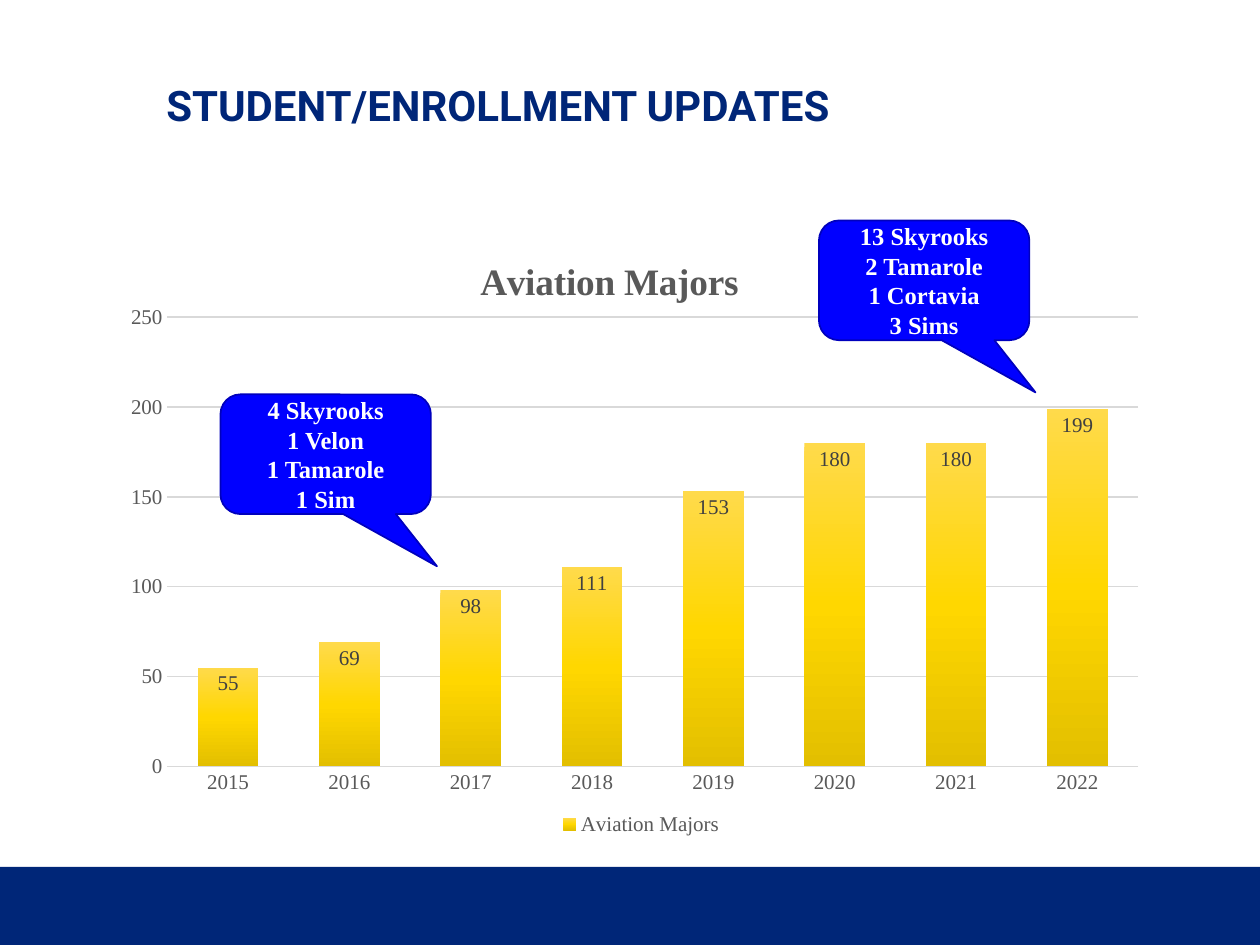
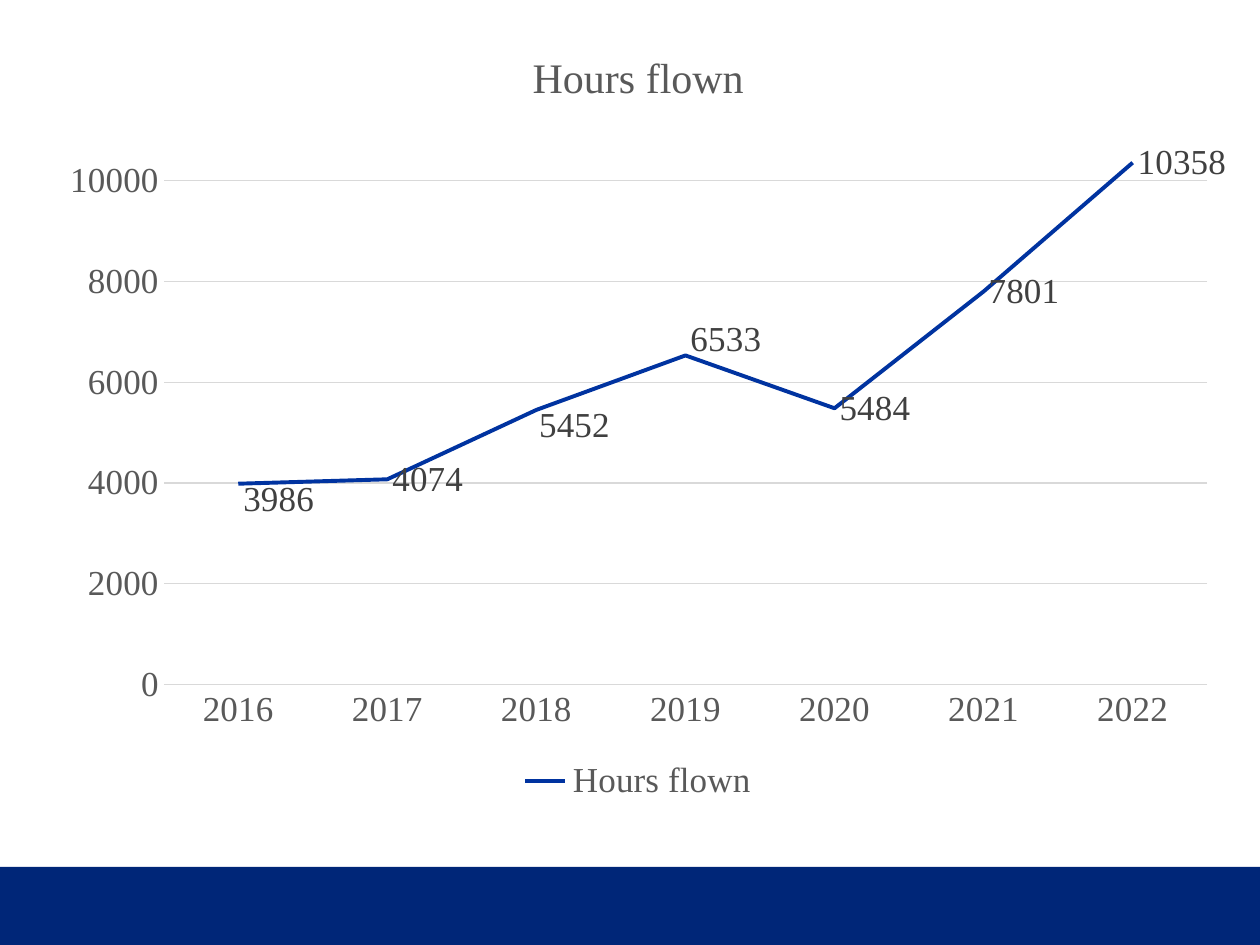
from dataclasses import dataclass
from typing import Optional

from pptx import Presentation
from pptx import util as u
from pptx.chart import data as chart_data
from pptx.dml import color as dml
from pptx.enum import chart as chart_enum, shapes, text
from pptx.oxml import parse_xml
from pptx.oxml.ns import nsdecls


@dataclass(frozen=True)
class Theme:
    navy: str = "002678"
    line_blue: str = "0033A0"
    callout: str = "0000FF"
    callout_edge: str = "0000BD"
    white: str = "FFFFFF"
    chart_text: str = "595959"
    label_text: str = "404040"
    grid: str = "D9D9D9"
    bar_stops: tuple = ((0, "FFDA4B"), (50, "FFD700"), (100, "E3BF00"))
    heading_font: str = "Roboto"
    body_font: str = "Times New Roman"
    heading_size: float = 24
    callout_size: float = 14


@dataclass(frozen=True)
class Box:
    left: float
    top: float
    width: float
    height: float

    def lengths(self) -> tuple:
        return tuple(u.Inches(v) for v in (self.left, self.top, self.width, self.height))


@dataclass(frozen=True)
class Callout:
    left: float
    top: float
    lines: tuple


@dataclass(frozen=True)
class ChartPlan:
    kind: chart_enum.XL_CHART_TYPE
    box: Box
    plot: Box
    name: str
    first_year: int
    values: tuple
    maximum: float
    step: float
    text_size: float
    title_size: float
    title_bold: bool
    axis_width: float
    label_position: chart_enum.XL_LABEL_POSITION
    title_at: Optional[tuple] = None


THEME = Theme()
BAND = Box(0, 6.88, 10, 0.62)
HEADING = Box(1.25, 0.5, 7.5, 0.58)
CALLOUT_WIDTH, CALLOUT_HEIGHT = 1.67, 0.95
CALLOUT_ADJUSTMENTS = (0.529, 0.936, 0.167)
FLEET_CALLOUTS = (
    Callout(1.75, 3.13, ("4 Skyrooks", "1 Velon", "1 Tamarole", "1 Sim")),
    Callout(6.5, 1.75, ("13 Skyrooks", "2 Tamarole", "1 Cortavia", "3 Sims")),
)
MAJORS = ChartPlan(
    kind=chart_enum.XL_CHART_TYPE.COLUMN_CLUSTERED,
    box=Box(0.93, 1.75, 8.32, 4.92),
    plot=Box(0.048, 0.156, 0.926, 0.725),
    name="Aviation Majors",
    first_year=2015,
    values=(55, 69, 98, 111, 153, 180, 180, 199),
    maximum=250,
    step=50,
    text_size=12,
    title_size=21.3,
    title_bold=True,
    axis_width=1,
    label_position=chart_enum.XL_LABEL_POSITION.INSIDE_END,
    title_at=(0.34, 0.05),
)
HOURS = ChartPlan(
    kind=chart_enum.XL_CHART_TYPE.LINE,
    box=Box(0.37, 0.16, 9.39, 6.25),
    plot=Box(0.099, 0.14, 0.882, 0.704),
    name="Hours flown",
    first_year=2016,
    values=(3986, 4074, 5452, 6533, 5484, 7801, 10358),
    maximum=11000,
    step=2000,
    text_size=20,
    title_size=24,
    title_bold=False,
    axis_width=0.75,
    label_position=chart_enum.XL_LABEL_POSITION.RIGHT,
)
HOURS_LABEL_SHIFTS = {0: (0, 0.02), 2: (-0.002, 0.02), 3: (0, -0.02)}


def rgb(value: str) -> dml.RGBColor:
    return dml.RGBColor.from_string(value)


def style_font(font, size: float, color: str, bold: bool = False,
               name: str = THEME.body_font) -> None:
    font.name = name
    font.size = u.Pt(size)
    font.bold = bold
    font.color.rgb = rgb(color)


def style_line(line, color: str, width: float) -> None:
    line.color.rgb = rgb(color)
    line.width = u.Pt(width)


def add_filled_shape(slide, preset, box: Box, color: str):
    shape = slide.shapes.add_shape(preset, *box.lengths())
    shape.shadow.inherit = False
    shape.fill.solid()
    shape.fill.fore_color.rgb = rgb(color)
    shape.line.fill.background()
    return shape


def add_banded_slide(presentation):
    slide = presentation.slides.add_slide(presentation.slide_layouts[6])
    add_filled_shape(slide, shapes.MSO_SHAPE.RECTANGLE, BAND, THEME.navy)
    return slide


def add_heading(slide, wording: str) -> None:
    frame = slide.shapes.add_textbox(*HEADING.lengths()).text_frame
    frame.word_wrap = True
    frame.vertical_anchor = text.MSO_ANCHOR.BOTTOM
    frame.margin_left = frame.margin_right = u.Inches(0.07)
    frame.margin_top = frame.margin_bottom = u.Inches(0.04)
    paragraph = frame.paragraphs[0]
    paragraph.line_spacing = 0.9
    run = paragraph.add_run()
    run.text = wording
    style_font(run.font, THEME.heading_size, THEME.navy, True, THEME.heading_font)


def add_callout(slide, callout: Callout) -> None:
    box = Box(callout.left, callout.top, CALLOUT_WIDTH, CALLOUT_HEIGHT)
    shape = add_filled_shape(
        slide, shapes.MSO_SHAPE.ROUNDED_RECTANGULAR_CALLOUT, box, THEME.callout)
    style_line(shape.line, THEME.callout_edge, 1)
    for index, adjustment in enumerate(CALLOUT_ADJUSTMENTS):
        shape.adjustments[index] = adjustment
    frame = shape.text_frame
    frame.word_wrap = True
    frame.vertical_anchor = text.MSO_ANCHOR.MIDDLE
    for index, wording in enumerate(callout.lines):
        paragraph = frame.add_paragraph() if index else frame.paragraphs[0]
        paragraph.alignment = text.PP_ALIGN.CENTER
        run = paragraph.add_run()
        run.text = wording
        style_font(run.font, THEME.callout_size, THEME.white, True)


def set_layout(parent, index: int, settings: dict) -> None:
    for old_layout in parent.xpath("./c:layout"):
        parent.remove(old_layout)
    entries = "".join(f'<c:{key} val="{value}"/>' for key, value in settings.items())
    parent.insert(index, parse_xml(
        f'<c:layout {nsdecls("c")}><c:manualLayout>{entries}</c:manualLayout></c:layout>'))


def add_chart_title(chart, plan: ChartPlan) -> None:
    chart.has_title = True
    title = chart.chart_title
    run = title.text_frame.paragraphs[0].add_run()
    run.text = plan.name
    style_font(run.font, plan.title_size, THEME.chart_text, plan.title_bold)
    title.include_in_layout = False
    if plan.title_at:
        left, top = plan.title_at
        set_layout(title._element, 1,
                   {"xMode": "edge", "yMode": "edge", "x": left, "y": top})


def style_axes(chart, plan: ChartPlan) -> None:
    category_axis, value_axis = chart.category_axis, chart.value_axis
    for axis in (category_axis, value_axis):
        axis.major_tick_mark = axis.minor_tick_mark = chart_enum.XL_TICK_MARK.NONE
        style_font(axis.tick_labels.font, plan.text_size, THEME.chart_text)
    style_line(category_axis.format.line, THEME.grid, plan.axis_width)
    value_axis.format.line.fill.background()
    value_axis.minimum_scale = 0
    value_axis.maximum_scale = plan.maximum
    value_axis.major_unit = plan.step
    value_axis.has_major_gridlines = True
    style_line(value_axis.major_gridlines.format.line, THEME.grid, 0.75)


def add_series_chart(slide, plan: ChartPlan):
    data = chart_data.CategoryChartData()
    data.categories = [str(plan.first_year + i) for i in range(len(plan.values))]
    data.add_series(plan.name, plan.values)
    chart = slide.shapes.add_chart(plan.kind, *plan.box.lengths(), data).chart
    style_font(chart.font, plan.text_size, THEME.chart_text)
    add_chart_title(chart, plan)
    style_axes(chart, plan)
    chart.has_legend = True
    chart.legend.position = chart_enum.XL_LEGEND_POSITION.BOTTOM
    chart.legend.include_in_layout = False
    style_font(chart.legend.font, plan.text_size, THEME.chart_text)
    plot = chart.plots[0]
    plot.vary_by_categories = False
    labels = plot.series[0].data_labels
    labels.show_value = True
    labels.position = plan.label_position
    style_font(labels.font, plan.text_size, THEME.label_text)
    set_layout(chart._chartSpace.xpath("./c:chart/c:plotArea")[0], 0, {
        "layoutTarget": "inner", "xMode": "edge", "yMode": "edge",
        "x": plan.plot.left, "y": plan.plot.top,
        "w": plan.plot.width, "h": plan.plot.height})
    return chart


def fill_bars(chart) -> None:
    plot = chart.plots[0]
    plot.gap_width = 100
    plot.overlap = -24
    stops = "".join(
        f'<a:gs pos="{position * 1000}"><a:srgbClr val="{color}"/></a:gs>'
        for position, color in THEME.bar_stops)
    plot.series[0]._element.get_or_add_spPr().insert(0, parse_xml(
        f'<a:gradFill {nsdecls("a")} rotWithShape="1"><a:gsLst>{stops}</a:gsLst>'
        '<a:lin ang="5400000" scaled="0"/></a:gradFill>'))


def style_hours_line(chart) -> None:
    series = chart.plots[0].series[0]
    series.smooth = False
    series.marker.style = chart_enum.XL_MARKER_STYLE.NONE
    style_line(series.format.line, THEME.line_blue, 2.25)
    for index, (across, down) in HOURS_LABEL_SHIFTS.items():
        label = series.points[index].data_label
        style_font(label.font, HOURS.text_size, THEME.label_text)
        label.position = HOURS.label_position
        element = series._element.xpath(f"./c:dLbls/c:dLbl[c:idx/@val='{index}']")[0]
        set_layout(element, 1, {"x": across, "y": down})


def main() -> None:
    presentation = Presentation()
    presentation.slide_width = u.Inches(10)
    presentation.slide_height = u.Inches(7.5)

    enrollment_slide = add_banded_slide(presentation)
    add_heading(enrollment_slide, "STUDENT/ENROLLMENT UPDATES")
    fill_bars(add_series_chart(enrollment_slide, MAJORS))
    for callout in FLEET_CALLOUTS:
        add_callout(enrollment_slide, callout)

    hours_slide = add_banded_slide(presentation)
    style_hours_line(add_series_chart(hours_slide, HOURS))

    presentation.save("out.pptx")


if __name__ == "__main__":
    main()
